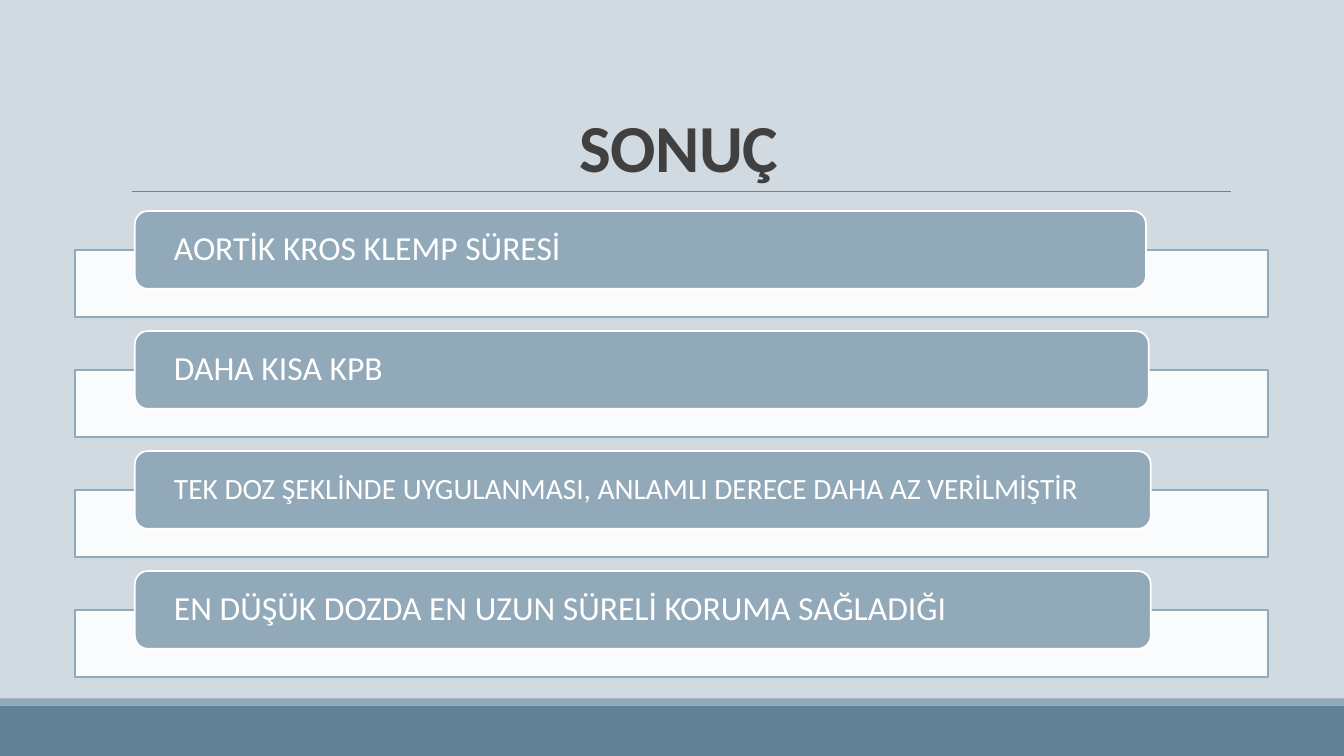
from lxml.etree import SubElement
from pptx import Presentation
from pptx.dml.color import RGBColor
from pptx.enum.shapes import MSO_CONNECTOR, MSO_SHAPE
from pptx.enum.text import MSO_ANCHOR, PP_ALIGN
from pptx.oxml.ns import qn
from pptx.util import Cm, Pt

HUES = {"back": "D1D9E1", "deep": "618197", "soft": "92A9B9",
        "rule": "808080", "ink": "404040", "white": "FFFFFF"}
WIDE, HIGH = 33.87, 19.05
ITEMS = [("AORTİK KROS KLEMP SÜRESİ", 24, 25.48),
         ("DAHA KISA KPB", 24, 25.55),
         ("TEK DOZ ŞEKLİNDE UYGULANMASI, ANLAMLI DERECE DAHA AZ VERİLMİŞTİR", 21, 25.6),
         ("EN DÜŞÜK DOZDA EN UZUN SÜRELİ KORUMA SAĞLADIĞI", 24, 25.6)]


def hue(name):
    """Return the named colour."""
    return RGBColor.from_string(HUES[name])


def block(slide, kind, box, fill, line=None):
    """Add a filled shape, outlined if a line colour is given."""
    shape = slide.shapes.add_shape(kind, *map(Cm, box))
    shape.shadow.inherit = False
    shape.fill.solid()
    shape.fill.fore_color.rgb = hue(fill)
    if line:
        shape.line.color.rgb = hue(line)
        shape.line.width = Pt(1.25)
    else:
        shape.line.fill.background()
    return shape


def write(para, text, size, color, bold=False):
    """Add one run to a paragraph."""
    run = para.add_run()
    run.text = text
    font = run.font
    font.name, font.size, font.bold = "Calibri", Pt(size), bold
    font.color.rgb = hue(color)
    return run


def footer(slide, box):
    """Draw the two bands at the foot of the slide."""
    left, top, width, height = box
    thin = 0.18
    block(slide, MSO_SHAPE.RECTANGLE, (left, top + thin, width, height - thin), "deep")
    block(slide, MSO_SHAPE.RECTANGLE, (left, top, width, thin), "soft")


def header(slide, box):
    """Place the title with a thin rule along its lower edge."""
    left, top, width, height = box
    base = top + height
    rule = slide.shapes.add_connector(
        MSO_CONNECTOR.STRAIGHT, Cm(left + 0.28), Cm(base), Cm(left + width + 0.02), Cm(base))
    rule.line.color.rgb = hue("rule")
    rule.line.width = Pt(0.5)
    SubElement(rule._element.spPr, qn("a:effectLst"))
    frame = slide.shapes.add_textbox(*map(Cm, box)).text_frame
    frame.word_wrap = True
    frame.vertical_anchor = MSO_ANCHOR.BOTTOM
    frame.margin_left = Cm(0.43)
    para = frame.paragraphs[0]
    para.alignment = PP_ALIGN.CENTER
    para.line_spacing = 0.85
    run = write(para, "SONUÇ", 48, "ink", True)
    run._r.get_or_add_rPr().set("spc", "-50")


def entry(slide, box, text, size, span):
    """Draw one pale bar with its label overlapping the top."""
    left, top, width, height = box
    drop = 0.98
    bar = block(slide, MSO_SHAPE.RECTANGLE, (left, top + drop, width, height - drop),
                "white", "soft")
    tint = bar._element.spPr.find(qn("a:solidFill")).find(qn("a:srgbClr"))
    SubElement(tint, qn("a:alpha")).set("val", "90000")
    label = block(slide, MSO_SHAPE.ROUNDED_RECTANGLE, (left + 1.5, top, span, 1.96),
                  "soft", "white")
    frame = label.text_frame
    frame.word_wrap = True
    frame.vertical_anchor = MSO_ANCHOR.MIDDLE
    frame.margin_left = frame.margin_right = Cm(0.89)
    frame.margin_top = frame.margin_bottom = 0
    para = frame.paragraphs[0]
    para.alignment = PP_ALIGN.LEFT
    para.line_spacing = 0.9
    write(para, text, size, "white")


def points(slide, box):
    """Stack the entries at an even pitch down the box."""
    left, top, width, height = box
    tall = 2.67
    pitch = (height - tall) / (len(ITEMS) - 1)
    for row, item in enumerate(ITEMS):
        entry(slide, (left, top + row * pitch, width, tall), *item)


def main():
    """Build and save the slide."""
    deck = Presentation()
    deck.slide_width, deck.slide_height = Cm(WIDE), Cm(HIGH)
    slide = deck.slides.add_slide(deck.slide_layouts[6])
    fill = slide.background.fill
    fill.solid()
    fill.fore_color.rgb = hue("back")
    footer(slide, (0, 17.6, WIDE, HIGH - 17.6))
    header(slide, (3.05, 0.79, 27.94, 4.04))
    points(slide, (1.9, 5.32, 30.05, 11.74))
    deck.save("out.pptx")


if __name__ == "__main__":
    main()
